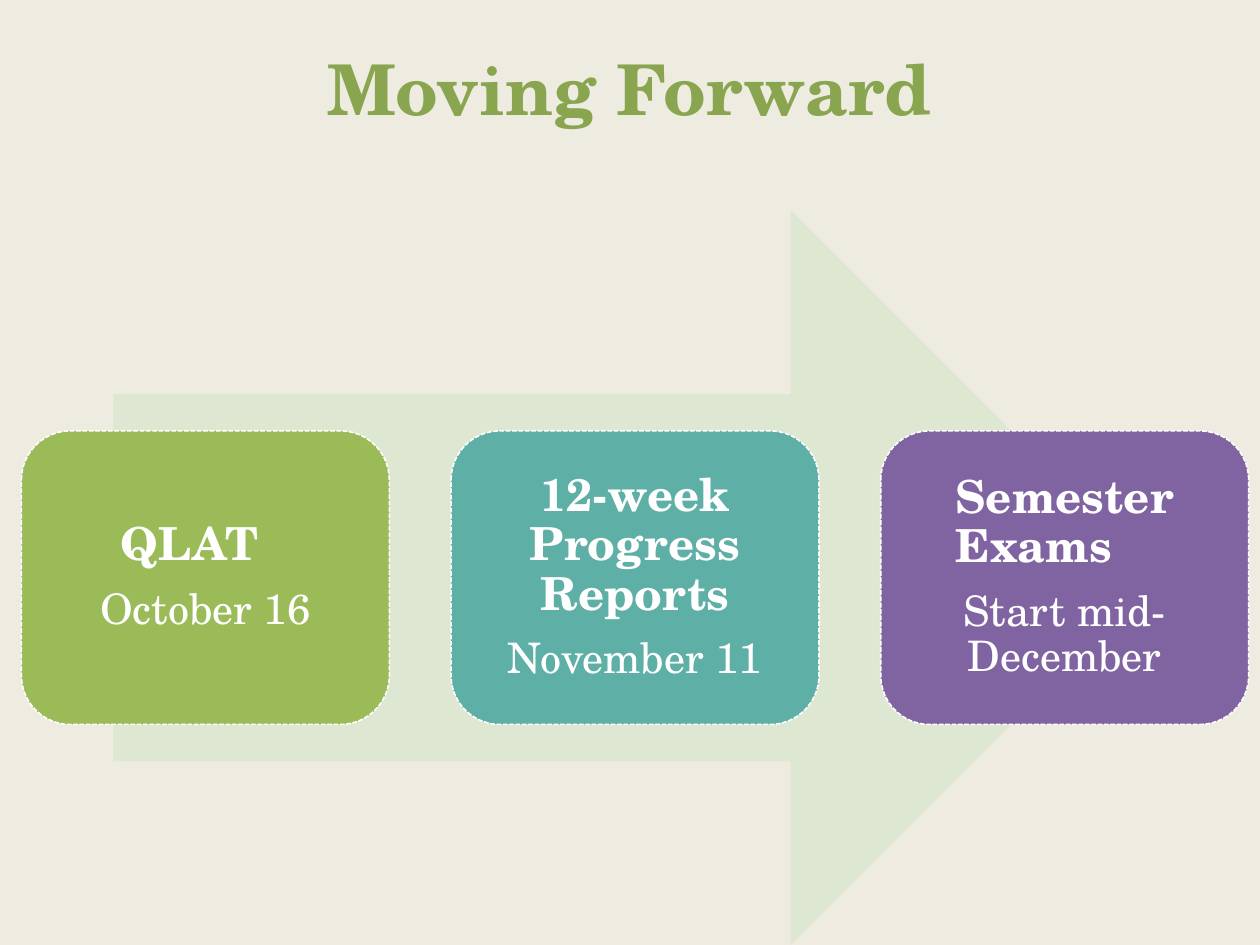
from dataclasses import dataclass

from pptx import Presentation
from pptx import util as u
from pptx.dml.color import RGBColor
from pptx.enum import dml, shapes, text
from pptx.shapes.autoshape import Shape
from pptx.slide import Slide


@dataclass(frozen=True)
class Theme:
    font: str = "TeX Gyre Schola"
    back: str = "EEECE1"
    arrow: str = "DEE7D1"
    title: str = "89A54F"
    light: str = "FFFFFF"
    green: str = "9BBB59"
    teal: str = "5EAFA6"
    purple: str = "8064A2"
    head: int = 40
    name: int = 26
    date: int = 24


@dataclass(frozen=True)
class Step:
    name: str
    date: str
    fill: str
    align: text.PP_ALIGN = text.PP_ALIGN.CENTER
    left: float = 0
    right: float = 0


THEME = Theme()
STEPS = [
    Step("QLAT", "October 16", THEME.green, right=0.25),
    Step("12-week Progress Reports", "November 11", THEME.teal),
    Step("Semester Exams", "Start mid-December", THEME.purple,
         text.PP_ALIGN.LEFT, left=0.37),
]
START, PITCH = 0.17, 3.41


def style(para, size: int, color: str, bold: bool) -> None:
    para.alignment = text.PP_ALIGN.CENTER
    for run in para.runs:
        run.font.name = THEME.font
        run.font.size = u.Pt(size)
        run.font.bold = bold
        run.font.color.rgb = RGBColor.from_string(color)


def indent(para, left: float, right: float) -> None:
    props = para._p.get_or_add_pPr()
    props.set("marL", str(u.Inches(left)))
    props.set("marR", str(u.Inches(right)))
    props.set("indent", "0")


def block(slide: Slide, kind: shapes.MSO_SHAPE, box: tuple, fill: str) -> Shape:
    shape = slide.shapes.add_shape(kind, *map(u.Inches, box))
    shape.shadow.inherit = False
    shape.fill.solid()
    shape.fill.fore_color.rgb = RGBColor.from_string(fill)
    shape.line.fill.background()
    return shape


def card(slide: Slide, step: Step, left: float) -> None:
    shape = block(slide, shapes.MSO_SHAPE.ROUNDED_RECTANGLE,
                  (left, 3.42, 2.92, 2.33), step.fill)
    shape.line.color.rgb = RGBColor.from_string(THEME.light)
    shape.line.width = u.Pt(0.9)
    shape.line.dash_style = dml.MSO_LINE.SQUARE_DOT
    frame = shape.text_frame
    frame.word_wrap = True
    frame.vertical_anchor = text.MSO_ANCHOR.MIDDLE
    frame.margin_left = frame.margin_right = u.Inches(0.11)
    frame.margin_top = frame.margin_bottom = u.Inches(0.11)
    frame.text = f"{step.name}\n{step.date}"
    name, date = frame.paragraphs
    style(name, THEME.name, THEME.light, True)
    style(date, THEME.date, THEME.light, False)
    for para in (name, date):
        para.line_spacing = 0.9
        para.space_after = u.Pt(10)
    name.alignment = step.align
    indent(name, step.left, step.right)
    indent(date, 0, 0)


def title(slide: Slide, words: str) -> None:
    box = slide.shapes.add_textbox(*map(u.Inches, (0.33, 0.25, 9.33, 0.83)))
    frame = box.text_frame
    frame.word_wrap = True
    frame.vertical_anchor = text.MSO_ANCHOR.BOTTOM
    frame.text = words
    style(frame.paragraphs[0], THEME.head, THEME.title, True)


def main() -> None:
    deck = Presentation()
    deck.slide_width, deck.slide_height = u.Inches(10), u.Inches(7.5)
    slide = deck.slides.add_slide(deck.slide_layouts[6])
    back = slide.background.fill
    back.solid()
    back.fore_color.rgb = RGBColor.from_string(THEME.back)
    block(slide, shapes.MSO_SHAPE.RIGHT_ARROW, (0.9, 1.67, 8.29, 5.83), THEME.arrow)
    for i, step in enumerate(STEPS):
        card(slide, step, START + i * PITCH)
    title(slide, "Moving Forward")
    deck.save("out.pptx")


if __name__ == "__main__":
    main()
